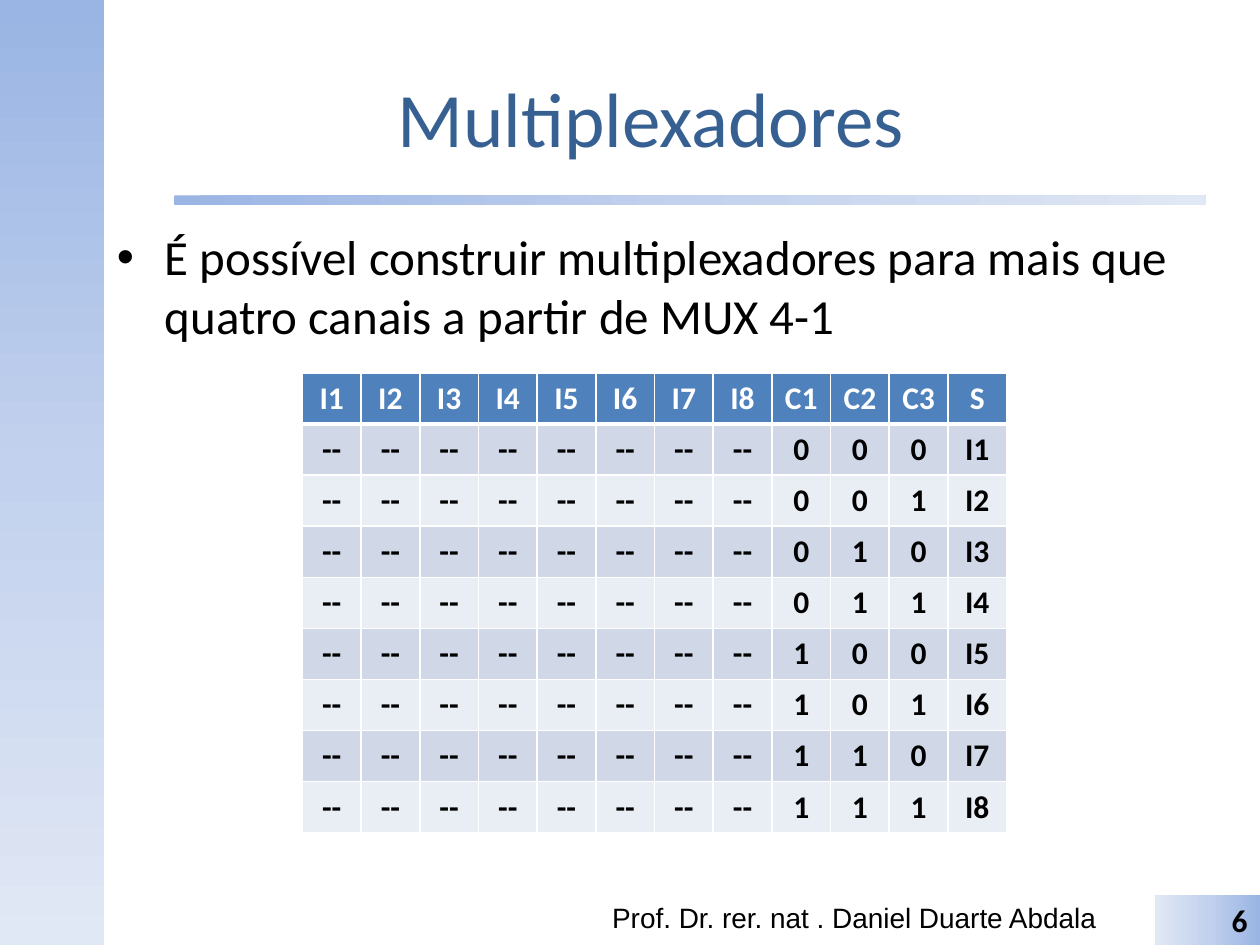
from dataclasses import dataclass

from lxml import etree
from pptx import Presentation
from pptx.dml.color import RGBColor
from pptx.enum.shapes import MSO_SHAPE
from pptx.enum.text import MSO_ANCHOR, PP_ALIGN
from pptx.oxml.ns import qn
from pptx.util import Inches, Pt

RECTANGLE, ROUNDED = MSO_SHAPE.RECTANGLE, MSO_SHAPE.ROUNDED_RECTANGLE
LEFT, CENTER, RIGHT = PP_ALIGN.LEFT, PP_ALIGN.CENTER, PP_ALIGN.RIGHT
TOP, MIDDLE = MSO_ANCHOR.TOP, MSO_ANCHOR.MIDDLE

COLORS = {
    "title": "376092", "text": "000000", "white": "FFFFFF",
    "header": "4F81BD", "odd_row": "D0D8E8", "even_row": "E9EDF4",
}
GRADIENT = {0: "9AB5E4", 50: "C2D1ED", 100: "E1E8F5"}

INPUTS = [f"I{number}" for number in range(1, 9)]
HEADERS = INPUTS + ["C1", "C2", "C3", "S"]


@dataclass
class Box:
    left: float
    top: float
    width: float
    height: float

    def lengths(self) -> tuple:
        return tuple(Inches(v) for v in (self.left, self.top, self.width, self.height))


@dataclass
class Style:
    size: float
    color: str = "text"
    font: str = "Calibri"
    bold: bool = False
    align: PP_ALIGN = LEFT


@dataclass
class Band:
    box: Box
    angle: int  # clockwise degrees
    shape: MSO_SHAPE = RECTANGLE


@dataclass
class Label:
    text: str
    box: Box
    style: Style
    anchor: MSO_ANCHOR = TOP


SIDEBAR = Band(Box(0, 0, 0.83, 7.5), 90)
TITLE_RULE = Band(Box(1.38, 1.55, 8.19, 0.08), 0, ROUNDED)
NUMBER_BAND = Band(Box(9.17, 7.1, 0.83, 0.4), 180)
TITLE = Label("Multiplexadores", Box(0.83, 0.3, 8.67, 1.25),
              Style(44, "title", align=CENTER), MIDDLE)
BODY = Label("É possível construir multiplexadores para mais que quatro canais a partir de MUX 4-1",
             Box(0.83, 1.75, 8.67, 4.95), Style(28))
AUTHOR = Label("Prof. Dr. rer. nat . Daniel Duarte Abdala",
               Box(4.76, 7.1, 4.19, 0.4), Style(16, font="Arial"))
TABLE_BOX = Box(2.4, 2.96, 5.59, 3.65)


def write(frame, text: str, style: Style) -> None:
    frame.text = text
    para = frame.paragraphs[0]
    para.alignment = style.align
    font = para.runs[0].font
    font.name, font.size, font.bold = style.font, Pt(style.size), style.bold
    font.color.rgb = RGBColor.from_string(COLORS[style.color])


def add_band(page, band: Band):
    shape = page.shapes.add_shape(band.shape, *band.box.lengths())
    shape.shadow.inherit = False
    shape.line.fill.background()
    shape.fill.gradient()
    shape.fill.gradient_angle = -band.angle % 360
    stops = shape.element.spPr.find(".//" + qn("a:gsLst"))
    for stop in list(stops):
        stops.remove(stop)
    for position, color in GRADIENT.items():
        stop = etree.SubElement(stops, qn("a:gs"), pos=str(position * 1000))
        etree.SubElement(stop, qn("a:srgbClr"), val=color)
    return shape


def add_label(page, label: Label):
    frame = page.shapes.add_textbox(*label.box.lengths()).text_frame
    frame.word_wrap = True
    frame.vertical_anchor = label.anchor
    write(frame, label.text, label.style)
    return frame


def add_bullet(para, indent: float) -> None:
    properties = para._p.get_or_add_pPr()
    properties.set("marL", str(Inches(indent)))
    properties.set("indent", str(-Inches(indent)))
    etree.SubElement(properties, qn("a:buFont"), typeface="Arial")
    etree.SubElement(properties, qn("a:buChar"), char="•")


def set_borders(cell, widths: dict[str, float]) -> None:
    properties = cell._tc.get_or_add_tcPr()
    for index, (side, width) in enumerate(widths.items()):
        line = etree.Element(qn(f"a:ln{side}"), w=str(Pt(width)))
        fill = etree.SubElement(line, qn("a:solidFill"))
        etree.SubElement(fill, qn("a:srgbClr"), val=COLORS["white"])
        properties.insert(index, line)


def truth_rows() -> list[list[str]]:
    """One row per selector value: its three bits choose the input sent to S."""
    return [["--"] * len(INPUTS) + list(f"{value:03b}") + [name]
            for value, name in enumerate(INPUTS)]


def add_truth_table(page, box: Box) -> None:
    rows = [HEADERS] + truth_rows()
    table = page.shapes.add_table(len(rows), len(HEADERS), *box.lengths()).table
    for column in table.columns:
        column.width = Inches(box.width / len(HEADERS))
    for row in table.rows:
        row.height = Inches(box.height / len(rows))
    for row_index, values in enumerate(rows):
        is_header = row_index == 0
        fill = "header" if is_header else ("even_row", "odd_row")[row_index % 2]
        style = Style(18, "white" if is_header else "text", bold=True, align=CENTER)
        widths = {"L": 1, "R": 1, "T": 3 if row_index == 1 else 1, "B": 3 if is_header else 1}
        for column_index, value in enumerate(values):
            cell = table.cell(row_index, column_index)
            write(cell.text_frame, value, style)
            cell.fill.solid()
            cell.fill.fore_color.rgb = RGBColor.from_string(COLORS[fill])
            set_borders(cell, widths)


def main() -> None:
    deck = Presentation()
    deck.slide_width, deck.slide_height = Inches(10), Inches(7.5)
    page = deck.slides.add_slide(deck.slide_layouts[6])

    # Background bands
    add_band(page, SIDEBAR)
    add_band(page, TITLE_RULE)

    # Title and statement
    add_label(page, TITLE)
    statement = add_label(page, BODY).paragraphs[0]
    statement.space_before = Pt(5.6)
    add_bullet(statement, 0.38)

    # Footer
    add_label(page, AUTHOR)
    number = add_band(page, NUMBER_BAND).text_frame
    number.vertical_anchor = MIDDLE
    write(number, "6", Style(18, bold=True, align=RIGHT))

    # Truth table of the 8-1 multiplexer
    add_truth_table(page, TABLE_BOX)

    deck.save("out.pptx")


if __name__ == "__main__":
    main()
